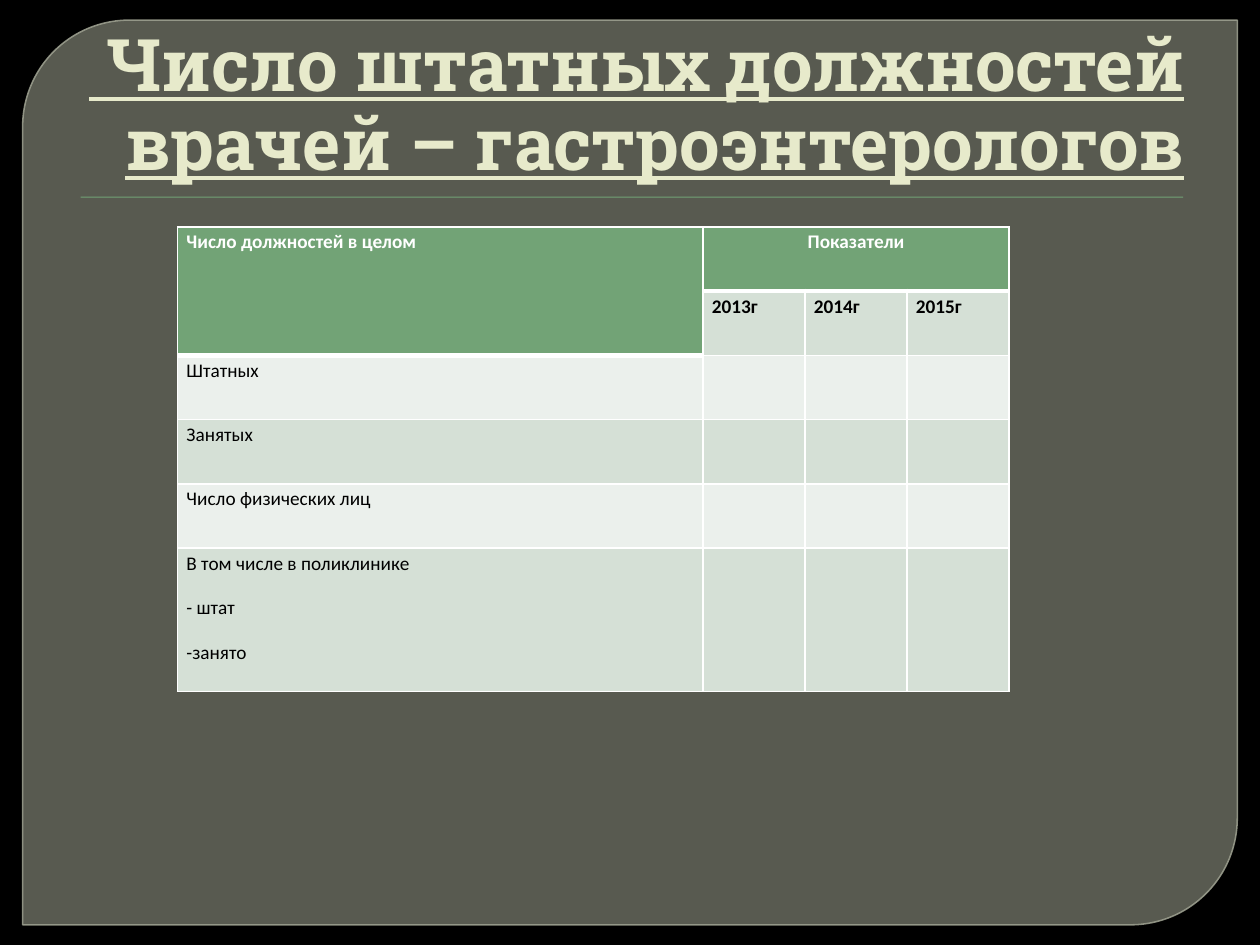
from lxml import etree
from pptx import Presentation
from pptx import util as u
from pptx.dml.color import RGBColor
from pptx.enum import shapes, text
from pptx.oxml.ns import qn


def paint(fill, color, alpha=None):
    fill.solid()
    fill.fore_color.rgb = RGBColor.from_string(color)
    if alpha:
        clr = fill._xPr.find(qn("a:solidFill"))[0]
        etree.SubElement(clr, qn("a:alpha"), val=str(alpha * 1000))


def border(cell, side, width):
    ln = etree.Element(qn("a:" + side), w=str(u.Pt(width)))
    sf = etree.SubElement(ln, qn("a:solidFill"))
    etree.SubElement(sf, qn("a:srgbClr"), val="FFFFFF")
    return ln


prs = Presentation()
prs.slide_width, prs.slide_height = u.Inches(10), u.Inches(7.5)
s = prs.slides.add_slide(prs.slide_layouts[6])
paint(s.background.fill, "000000")

panel = s.shapes.add_shape(shapes.MSO_SHAPE.ROUND_2_DIAG_RECTANGLE,
                           u.Inches(0.18), u.Inches(0.16), u.Inches(9.64), u.Inches(7.18))
panel.adjustments[0] = 0.118
panel.shadow.inherit = False
paint(panel.fill, "888B7B", 65)
paint(panel.line.fill, "9DA090", 88)
panel.line.width = u.Pt(0.87)

rule = s.shapes.add_shape(shapes.MSO_SHAPE.RECTANGLE,
                          u.Inches(0.64), u.Inches(1.56), u.Inches(8.75), u.Inches(0.01))
rule.shadow.inherit = False
paint(rule.fill, "72A376")
rule.line.fill.background()

title = s.shapes.add_textbox(u.Inches(0.5), u.Inches(0.28), u.Inches(9), u.Inches(1.25))
tf = title.text_frame
tf.word_wrap = True
tf.vertical_anchor = text.MSO_ANCHOR.BOTTOM
p = tf.paragraphs[0]
p.alignment = text.PP_ALIGN.RIGHT
p.line_spacing = 0.91
r = p.add_run()
r.text = " Число штатных должностей врачей – гастроэнтерологов"
for name, value in {"name": "Roboto Slab", "size": u.Pt(41.4), "bold": True, "underline": True}.items():
    setattr(r.font, name, value)
paint(r.font.fill, "E7EACB")

rows = [
    ["Число должностей в целом", "Показатели", "", ""],
    ["", "2013г", "2014г", "2015г"],
    ["Штатных", "", "", ""],
    ["Занятых", "", "", ""],
    ["Число физических лиц", "", "", ""],
    ["В том числе в поликлинике\n- штат\n-занято", "", "", ""],
]
tbl = s.shapes.add_table(6, 4, u.Inches(1.41), u.Inches(1.8), u.Inches(6.61), u.Inches(3.67)).table
for col, width in zip(tbl.columns, [4.17, 0.81, 0.81, 0.81]):
    col.width = u.Inches(width)
for row, height in zip(tbl.rows, [0.51] * 5 + [1.14]):
    row.height = u.Inches(height)
tbl.cell(0, 0).merge(tbl.cell(1, 0))
tbl.cell(0, 1).merge(tbl.cell(0, 3))

cell_format = {"margin_left": u.Inches(0.07), "margin_right": u.Inches(0.07),
               "margin_top": 0, "margin_bottom": 0}
for i, values in enumerate(rows):
    for j, value in enumerate(values):
        cell = tbl.cell(i, j)
        head = i == 0 or (i == 1 and j == 0)
        for name, size in cell_format.items():
            setattr(cell, name, size)
        top = 3 if (i == 1 and j) or (i == 2 and j == 0) else 1
        bottom = 3 if head and (i == 1 or j == 0 or i == 0) else 1
        tcPr = cell._tc.get_or_add_tcPr()
        for side, width in {"lnL": 1, "lnR": 1, "lnT": top, "lnB": bottom}.items():
            tcPr.append(border(cell, side, width))
        paint(cell.fill, "72A376" if head else "D5E0D6" if i % 2 else "EBF0EC")
        if not cell.is_spanned:
            cell.text = value
        for p in cell.text_frame.paragraphs:
            p.line_spacing = 1.15
            p.space_after = u.Pt(10)
            if value == "Показатели":
                p.alignment = text.PP_ALIGN.CENTER
            p.font.size = u.Pt(11)
            for r in p.runs:
                for name, setting in {"name": "Calibri", "size": u.Pt(11), "bold": i < 2}.items():
                    setattr(r.font, name, setting)
                paint(r.font.fill, "FFFFFF" if head else "000000")

prs.save("out.pptx")
